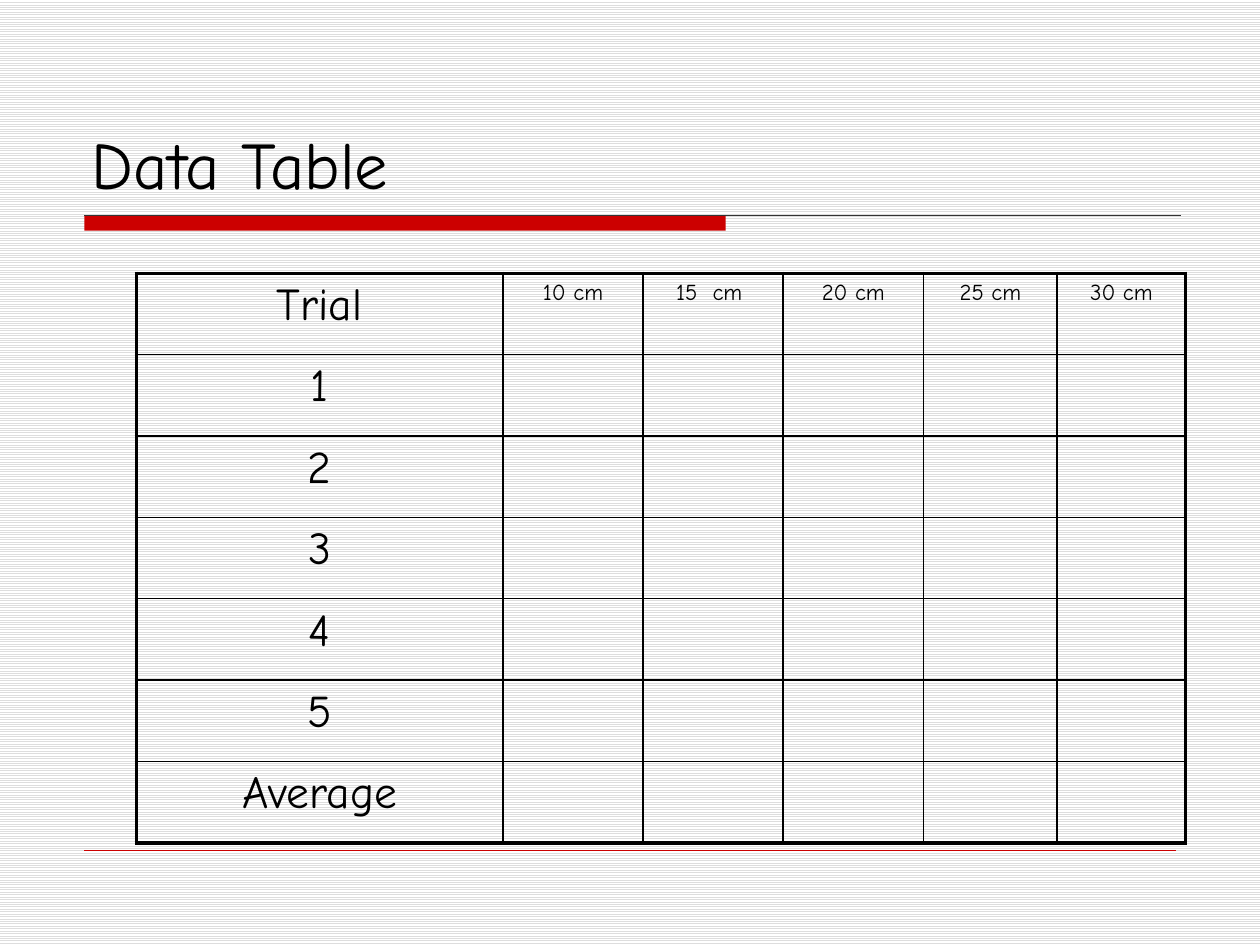
import pptx
import pptx.dml.color
import pptx.enum.dml
import pptx.enum.shapes
import pptx.enum.text
import pptx.oxml
import pptx.oxml.ns
import pptx.util
from pptx.util import Cm

FONT = "Comic Neue"
BLACK = "000000"
RED = "CC0000"
DISTANCES = ["10 cm", "15  cm ", "20 cm", "25 cm", "30 cm"]
TRIALS = ["Trial", "1", "2", "3", "4", "5", "Average"]
COLUMN_WIDTHS = [7.39, 2.82, 2.82, 2.84, 2.69, 2.59]
ROW_HEIGHT = 1.64


def colour(code):
    return pptx.dml.color.RGBColor.from_string(code)


def add_span(para, text, size):
    span = para.add_run()
    span.text = text
    span.font.name = FONT
    span.font.size = pptx.util.Pt(size)
    span.font.bold = False
    span.font.color.rgb = colour(BLACK)


def set_background(page):
    fill = page.background.fill
    fill.patterned()
    fill.pattern = pptx.enum.dml.MSO_PATTERN.LIGHT_HORIZONTAL
    fill.fore_color.rgb = colour("DDDDDD")
    fill.back_color.rgb = colour("FFFFFF")


def add_title(page, text):
    box = page.shapes.title
    box.left, box.top, box.width, box.height = Cm(1.6), Cm(0.84), Cm(22.22), Cm(3.38)
    frame = box.text_frame
    frame.word_wrap = True
    frame.auto_size = pptx.enum.text.MSO_AUTO_SIZE.NONE
    frame.vertical_anchor = pptx.enum.text.MSO_ANCHOR.BOTTOM
    para = frame.paragraphs[0]
    para.alignment = pptx.enum.text.PP_ALIGN.LEFT
    add_span(para, text, 38)


def add_bar(page, left, top, width, height):
    bar = page.shapes.add_shape(
        pptx.enum.shapes.MSO_SHAPE.RECTANGLE, Cm(left), Cm(top), Cm(width), Cm(height))
    bar.shadow.inherit = False
    bar.fill.solid()
    bar.fill.fore_color.rgb = colour(RED)
    bar.line.fill.background()


def add_rule(page, left, right, top, code, weight):
    rule = page.shapes.add_connector(
        pptx.enum.shapes.MSO_CONNECTOR.STRAIGHT, Cm(left), Cm(top), Cm(right), Cm(top))
    rule.line.color.rgb = colour(code)
    rule.line.width = pptx.util.Pt(weight)
    properties = rule._element.spPr
    properties.append(properties.makeelement(pptx.oxml.ns.qn("a:effectLst"), {}))


def set_borders(cell, weights):
    properties = cell._tc.get_or_add_tcPr()
    for position, (side, weight) in enumerate(weights.items()):
        border = pptx.oxml.parse_xml(
            f'<a:ln{side} {pptx.oxml.ns.nsdecls("a")} w="{pptx.util.Pt(weight)}">'
            f'<a:solidFill><a:srgbClr val="{BLACK}"/></a:solidFill></a:ln{side}>')
        properties.insert(position, border)


def fill_cell(cell, text, size):
    para = cell.text_frame.paragraphs[0]
    para.alignment = pptx.enum.text.PP_ALIGN.CENTER
    para.space_before = pptx.util.Pt(size * 0.2)
    add_span(para, text, size)


def add_data_table(page, left, top):
    row_count, column_count = len(TRIALS), len(COLUMN_WIDTHS)
    table = page.shapes.add_table(
        row_count, column_count, Cm(left), Cm(top),
        Cm(sum(COLUMN_WIDTHS)), Cm(ROW_HEIGHT * row_count)).table
    table.first_row = False
    table.horz_banding = False
    for column, width in zip(table.columns, COLUMN_WIDTHS):
        column.width = Cm(width)
    for row_index, row in enumerate(table.rows):
        row.height = Cm(ROW_HEIGHT)
        for column_index, cell in enumerate(row.cells):
            cell.fill.background()
            outer_edges = {
                "L": column_index == 0,
                "R": column_index == column_count - 1,
                "T": row_index == 0,
                "B": row_index == row_count - 1,
            }
            set_borders(cell, {side: 2.25 if outer else 1
                               for side, outer in outer_edges.items()})
            if column_index == 0:
                fill_cell(cell, TRIALS[row_index], 26)
            elif row_index == 0:
                fill_cell(cell, DISTANCES[column_index - 1], 13)


def main():
    deck = pptx.Presentation()
    deck.slide_width, deck.slide_height = Cm(25.4), Cm(19.05)
    page = deck.slides.add_slide(deck.slide_layouts[5])
    set_background(page)
    add_bar(page, 1.7, 4.34, 12.93, 0.31)
    add_rule(page, 1.7, 23.8, 4.34, "333333", 0.75)
    add_rule(page, 1.7, 23.7, 17.15, RED, 0.25)
    add_title(page, "Data Table")
    add_data_table(page, 2.75, 5.51)
    deck.save("out.pptx")


if __name__ == "__main__":
    main()
